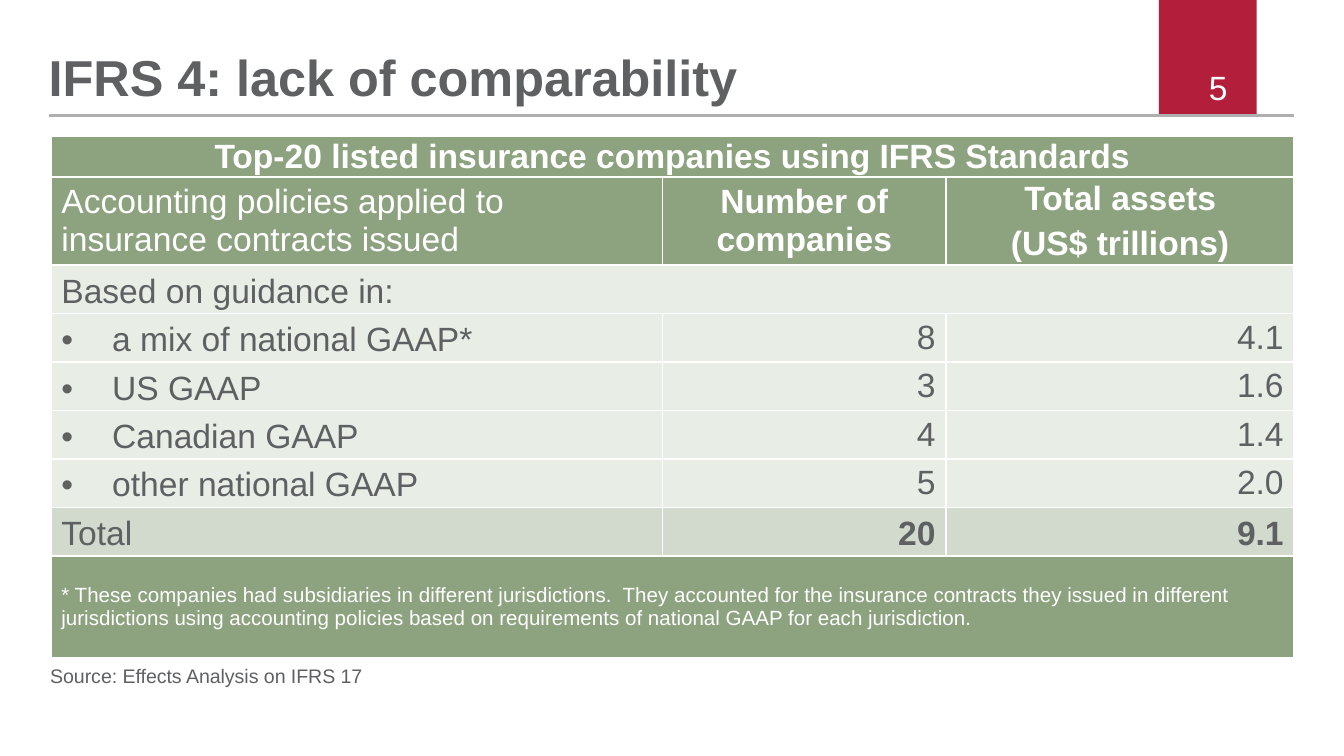
from lxml import etree
from pptx import Presentation
from pptx import util as u
from pptx.dml.color import RGBColor
from pptx.enum import shapes, text
from pptx.oxml.ns import qn

GREY, WHITE, RED, RULE = "5F6062", "FFFFFF", "B31E3B", "AFAFB0"
GREEN, PALE, SAGE = "8DA380", "E8EDE6", "D1DACC"
LEFT, CENTER, RIGHT = text.PP_ALIGN.LEFT, text.PP_ALIGN.CENTER, text.PP_ALIGN.RIGHT
TOP, MIDDLE, BOTTOM = text.MSO_ANCHOR.TOP, text.MSO_ANCHOR.MIDDLE, text.MSO_ANCHOR.BOTTOM

POLICIES = [
    ("a mix of national GAAP*", "8", "4.1"),
    ("US GAAP", "3", "1.6"),
    ("Canadian GAAP", "4", "1.4"),
    ("other national GAAP", "5", "2.0"),
]
FOOTNOTE = (
    "* These companies had subsidiaries in different jurisdictions.  They accounted "
    "for the insurance contracts they issued in different jurisdictions using "
    "accounting policies based on requirements of national GAAP for each jurisdiction."
)
COLUMNS = [11.56, 5.36, 6.58]
ROWS = [0.71, 1.57] + [0.86] * 6 + [1.92]


def color(value):
    return RGBColor.from_string(value)


def write(frame, words, size, ink, bold=False, align=LEFT, spacing=None):
    frame.text = words
    for paragraph in frame.paragraphs:
        paragraph.alignment = align
        if spacing:
            paragraph.line_spacing = spacing
        for run in paragraph.runs:
            run.font.name = "Arial"
            run.font.size = u.Pt(size)
            run.font.bold = bold
            run.font.color.rgb = color(ink)


def add_label(slide, box, words, size, ink, anchor, margins, **style):
    frame = slide.shapes.add_textbox(*map(u.Cm, box)).text_frame
    frame.word_wrap = True
    frame.vertical_anchor = anchor
    frame.margin_left = frame.margin_right = u.Cm(margins[0])
    frame.margin_top = frame.margin_bottom = u.Cm(margins[1])
    write(frame, words, size, ink, **style)


def add_header(slide, box):
    left, top, width, height = box
    tab = slide.shapes.add_shape(
        shapes.MSO_SHAPE.RECTANGLE,
        *map(u.Cm, (left + 20.98, top, 1.85, height)))
    tab.shadow.inherit = False
    tab.fill.solid()
    tab.fill.fore_color.rgb = color(RED)
    tab.line.fill.background()

    base = top + height
    rule = slide.shapes.add_connector(
        shapes.MSO_CONNECTOR.STRAIGHT,
        *map(u.Cm, (left, base, left + width, base)))
    rule.line.color.rgb = color(RULE)
    rule.line.width = u.Pt(1.2)
    etree.SubElement(rule._element.spPr, qn("a:effectLst"))

    add_label(slide, (left, top, 19.84, height - 0.15), "IFRS 4: lack of comparability",
              27, GREY, BOTTOM, (0, 0), bold=True, spacing=0.9)
    add_label(slide, (left + 16.59, top + 1.27, 5.92, 0.76), "5",
              18, WHITE, MIDDLE, (0.23, 0.1), align=RIGHT)


def add_borders(cell):
    properties = cell._tc.get_or_add_tcPr()
    for index, side in enumerate(("lnL", "lnR", "lnT", "lnB")):
        border = etree.Element(qn(f"a:{side}"), w=str(u.Pt(1)))
        fill = etree.SubElement(border, qn("a:solidFill"))
        etree.SubElement(fill, qn("a:srgbClr"), val=WHITE)
        properties.insert(index, border)


def add_bullet(paragraph):
    properties = paragraph._p.get_or_add_pPr()
    properties.set("marL", str(u.Cm(0.96)))
    properties.set("indent", str(-u.Cm(0.96)))
    etree.SubElement(properties, qn("a:buFont"), typeface="Arial")
    etree.SubElement(properties, qn("a:buChar"), char="•")


def fill_cell(cell, words, fill, ink=GREY, size=18, anchor=MIDDLE, **style):
    cell.margin_left = cell.margin_right = u.Cm(0.2)
    cell.margin_top = cell.margin_bottom = 0
    cell.vertical_anchor = anchor
    cell.fill.solid()
    cell.fill.fore_color.rgb = color(fill)
    write(cell.text_frame, words, size, ink, **style)


def add_comparison(slide, box):
    table = slide.shapes.add_table(len(ROWS), len(COLUMNS), *map(u.Cm, box)).table
    for column, width in zip(table.columns, COLUMNS):
        column.width = u.Cm(width)
    for row, height in zip(table.rows, ROWS):
        row.height = u.Cm(height)
    last = len(ROWS) - 1
    for banner in (0, 2, last):
        table.cell(banner, 0).merge(table.cell(banner, 2))

    fill_cell(table.cell(0, 0), "Top-20 listed insurance companies using IFRS Standards",
              GREEN, WHITE, bold=True, align=CENTER)
    fill_cell(table.cell(1, 0), "Accounting policies applied to insurance contracts issued",
              GREEN, WHITE)
    for column, heading in enumerate(
            ("Number of companies", "Total assets\n(US$ trillions)"), 1):
        fill_cell(table.cell(1, column), heading, GREEN, WHITE, bold=True, align=CENTER)
    table.cell(1, 2).text_frame.paragraphs[0].space_after = u.Pt(4)

    fill_cell(table.cell(2, 0), "Based on guidance in:", PALE, anchor=TOP, spacing=1.2)
    for row, (policy, *figures) in enumerate(POLICIES, 3):
        fill_cell(table.cell(row, 0), policy, PALE, anchor=TOP, spacing=1.2)
        add_bullet(table.cell(row, 0).text_frame.paragraphs[0])
        for column, figure in enumerate(figures, 1):
            fill_cell(table.cell(row, column), figure, PALE, align=RIGHT)

    for column, total in enumerate(("Total", "20", "9.1")):
        fill_cell(table.cell(last - 1, column), total, SAGE, anchor=TOP, spacing=1.2,
                  bold=column > 0, align=RIGHT if column else LEFT)
    fill_cell(table.cell(last, 0), FOOTNOTE, GREEN, WHITE, size=11)

    for cell in table.iter_cells():
        add_borders(cell)


def main():
    deck = Presentation()
    deck.slide_width, deck.slide_height = u.Cm(25.4), u.Cm(14.28)
    slide = deck.slides.add_slide(deck.slide_layouts[6])
    add_header(slide, (0.92, 0, 23.54, 2.18))
    add_comparison(slide, (0.96, 2.58, sum(COLUMNS), sum(ROWS)))
    add_label(slide, (0.7, 12.42, 15.21, 0.74), "Source: Effects Analysis on IFRS 17",
              10.5, GREY, TOP, (0.25, 0.13))
    deck.save("out.pptx")


if __name__ == "__main__":
    main()
